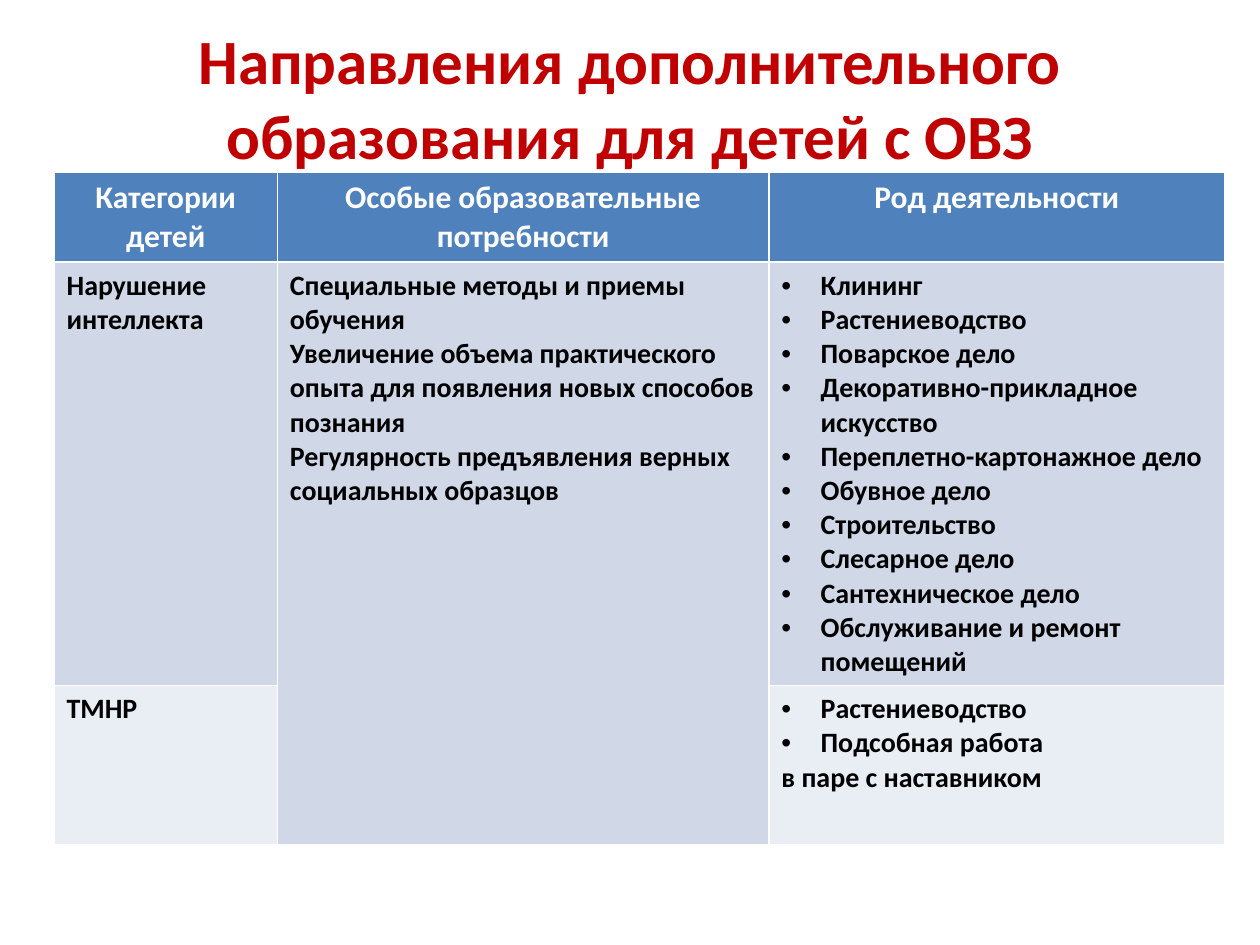
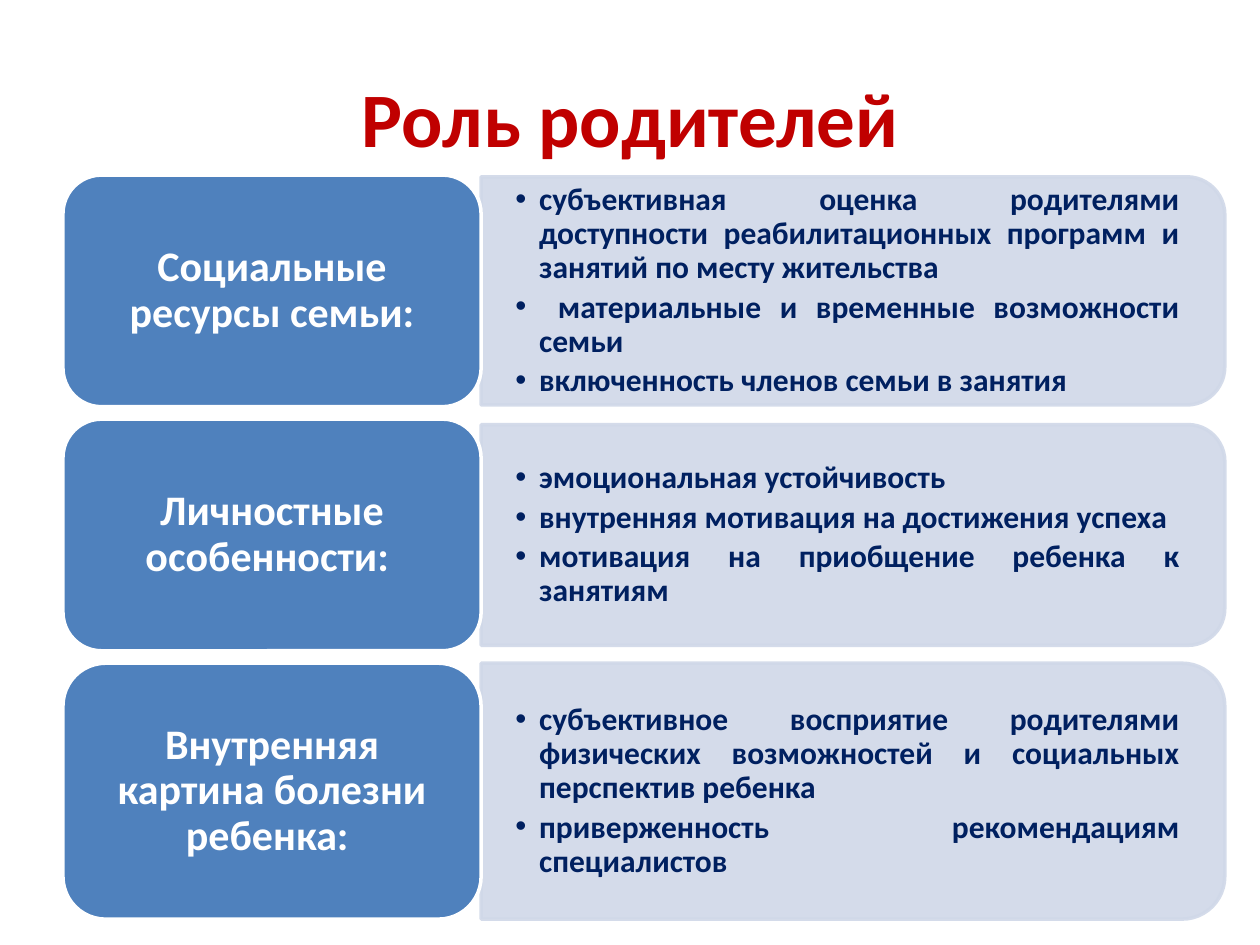
from lxml.etree import SubElement
from pptx import Presentation
from pptx.dml.color import RGBColor
from pptx.enum.shapes import MSO_SHAPE
from pptx.enum.text import MSO_ANCHOR, PP_ALIGN
from pptx.oxml.ns import qn
from pptx.util import Cm, Pt

FONT = "Calibri"
RED = RGBColor(0xC0, 0x00, 0x00)
BLUE = RGBColor(0x4F, 0x81, 0xBD)
PALE = RGBColor(0xD0, 0xD8, 0xE8)
LIGHT = RGBColor(0xE9, 0xED, 0xF4)
NAVY = RGBColor(0x00, 0x20, 0x60)
WHITE = RGBColor(0xFF, 0xFF, 0xFF)
BLACK = RGBColor(0x00, 0x00, 0x00)

# Content: table cells hold (bulleted lines, plain lines)
HEADS = ["Категории детей", "Особые образовательные потребности", "Род деятельности"]
NEEDS = [
    "Специальные методы и приемы обучения",
    "Увеличение объема практического опыта для появления новых способов познания",
    "Регулярность предъявления верных социальных образцов",
]
WORKS = [
    "Клининг", "Растениеводство", "Поварское дело",
    "Декоративно-прикладное искусство", "Переплетно-картонажное дело",
    "Обувное дело", "Строительство", "Слесарное дело",
    "Сантехническое дело", "Обслуживание и ремонт помещений",
]
BODY = [
    [([], ["Нарушение интеллекта"]), ([], NEEDS), (WORKS, [])],
    [([], ["ТМНР"]), ([], []),
     (["Растениеводство", "Подсобная работа"], ["в паре с наставником"])],
]
COLS = [4.5, 9.91, 9.19]
ROWS = [1.78, 8.53, 3.2]

# Each role: label, label height, panel height, points
ROLES = [
    ("Социальные ресурсы семьи:", 4.67, 4.6, [
        "субъективная оценка родителями доступности реабилитационных программ "
        "и занятий по месту жительства",
        " материальные и временные возможности семьи",
        "включенность членов семьи в занятия"]),
    ("Личностные особенности: ", 4.67, 4.45, [
        "эмоциональная устойчивость ",
        "внутренняя мотивация на достижения успеха",
        "мотивация на приобщение ребенка к занятиям "]),
    ("Внутренняя картина болезни ребенка: ", 5.16, 5.16, [
        "субъективное восприятие родителями физических возможностей "
        "и социальных перспектив ребенка",
        "приверженность рекомендациям специалистов"]),
]
LEFT, TOP, GAP = 1.27, 3.53, 0.25
LABEL_W, PANEL_W = 8.43, 14.99


def write(par, text, size, color, align=None):
    run = par.add_run()
    run.text = text
    font = run.font
    font.name, font.size, font.bold = FONT, Pt(size), True
    font.color.rgb = color
    par.alignment = align


def bullet(par, indent):
    props = par._p.get_or_add_pPr()
    props.set("marL", str(Cm(indent)))
    props.set("indent", str(-Cm(indent)))
    SubElement(props, qn("a:buFont")).set("typeface", "Arial")
    SubElement(props, qn("a:buChar")).set("char", "•")


def lines(frame, count):
    """Yield the first paragraph of a frame, then new ones."""
    for i in range(count):
        yield frame.add_paragraph() if i else frame.paragraphs[0]


def add_slide(deck, title, size, top, height):
    slide = deck.slides.add_slide(deck.slide_layouts[5])
    box = slide.shapes.title
    box.left, box.top, box.width, box.height = Cm(1.27), Cm(top), Cm(22.86), Cm(height)
    frame = box.text_frame
    frame.vertical_anchor = MSO_ANCHOR.MIDDLE
    write(frame.paragraphs[0], title, size, RED, PP_ALIGN.CENTER)
    return slide


def add_block(slide, kind, place, fill, line):
    shape = slide.shapes.add_shape(kind, *map(Cm, place))
    shape.shadow.inherit = False
    shape.fill.solid()
    shape.fill.fore_color.rgb = fill
    shape.line.color.rgb = line
    shape.line.width = Pt(2)
    return shape


def fill_table(slide):
    table = slide.shapes.add_table(
        len(ROWS), len(COLS), Cm(1.09), Cm(3.48), Cm(sum(COLS)), Cm(sum(ROWS))).table
    for col, width in zip(table.columns, COLS):
        col.width = Cm(width)
    for row, height in zip(table.rows, ROWS):
        row.height = Cm(height)
    for r, shade in enumerate([BLUE, PALE, LIGHT]):
        for cell in table.rows[r].cells:
            cell.fill.solid()
            cell.fill.fore_color.rgb = shade
    for c, head in enumerate(HEADS):
        write(table.cell(0, c).text_frame.paragraphs[0], head, 18, WHITE, PP_ALIGN.CENTER)
    for r, row in enumerate(BODY, 1):
        for c, (dots, plain) in enumerate(row):
            texts = dots + plain
            pars = lines(table.cell(r, c).text_frame, len(texts))
            for i, (par, text) in enumerate(zip(pars, texts)):
                write(par, text, 16, BLACK)
                if i < len(dots):
                    bullet(par, 0.79)
    table.cell(1, 1).merge(table.cell(2, 1))


def add_role(slide, top, label, high, depth, points):
    mid, edge = top + high / 2, LEFT + LABEL_W
    # Panel, turned so that its round corners face right
    place = (edge + (PANEL_W - depth) / 2, mid - PANEL_W / 2, depth, PANEL_W)
    panel = add_block(slide, MSO_SHAPE.ROUND_2_SAME_RECTANGLE, place, PALE, PALE)
    panel.rotation = 90
    for color in panel._element.spPr.iter(qn("a:srgbClr")):
        SubElement(color, qn("a:alpha")).set("val", "90000")
    # Points over the panel
    inner = depth * 0.9
    box = slide.shapes.add_textbox(
        Cm(edge), Cm(mid - inner / 2), Cm(PANEL_W - 0.22), Cm(inner))
    frame = box.text_frame
    frame.word_wrap = True
    frame.vertical_anchor = MSO_ANCHOR.MIDDLE
    frame.margin_left = frame.margin_right = Cm(0.69)
    frame.margin_top = frame.margin_bottom = Cm(0.36)
    for par, text in zip(lines(frame, len(points)), points):
        write(par, text, 18, NAVY, PP_ALIGN.JUSTIFY)
        par.level, par.line_spacing, par.space_after = 1, 0.9, Pt(3)
        bullet(par, 0.48)
    # Label
    frame = add_block(slide, MSO_SHAPE.ROUNDED_RECTANGLE,
                      (LEFT, top, LABEL_W, high), BLUE, WHITE).text_frame
    frame.word_wrap = True
    frame.vertical_anchor = MSO_ANCHOR.MIDDLE
    par = frame.paragraphs[0]
    write(par, label, 24, WHITE, PP_ALIGN.CENTER)
    par.line_spacing = 0.9


def main():
    deck = Presentation()
    deck.slide_width, deck.slide_height = Cm(25.4), Cm(19.05)
    fill_table(add_slide(
        deck, "Направления дополнительного образования для детей с ОВЗ", 36, 0.53, 2.84))
    slide = add_slide(deck, "Роль родителей", 44, 0.76, 3.18)
    top = TOP
    for label, high, depth, points in ROLES:
        add_role(slide, top, label, high, depth, points)
        top += high + GAP
    deck.save("out.pptx")


if __name__ == "__main__":
    main()
